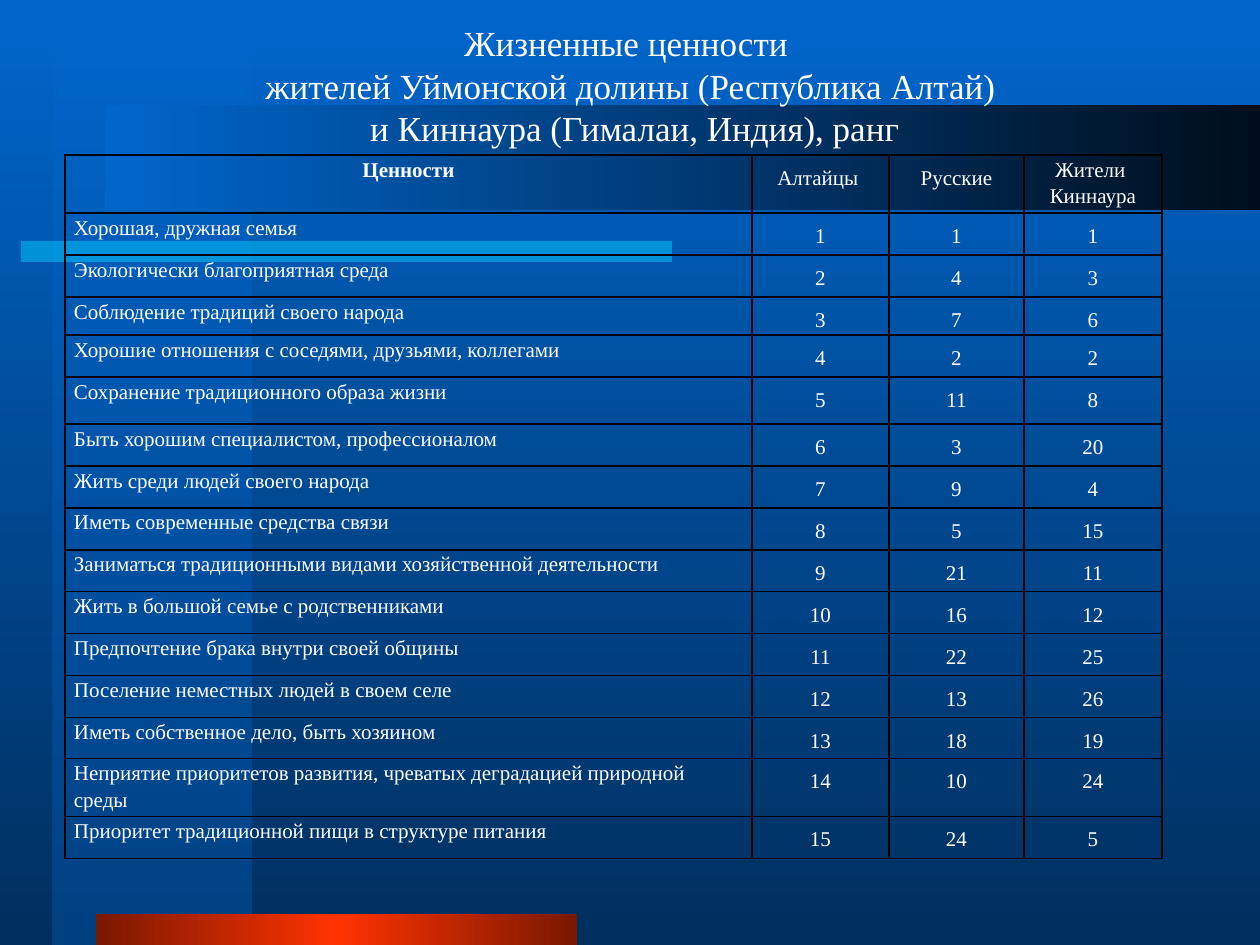
from dataclasses import dataclass
from lxml.etree import SubElement as Sub
from pptx import Presentation
from pptx.dml.color import RGBColor as Rgb
from pptx.enum.shapes import MSO_SHAPE as Kind
from pptx.enum.text import MSO_ANCHOR as Anchor, PP_ALIGN as Align
from pptx.oxml.ns import qn
from pptx.util import Emu, Pt


@dataclass(frozen=True)
class Theme:
    font: str = "Times New Roman"
    head: int = 20
    body: int = 12
    ink: str = "FFFFFF"
    rule: str = "000000"
    sky: str = "0066CC"
    deep: str = "002F5E"
    side: str = "0053A6"
    night: str = "000E1C"
    cyan: str = "00CCFF"
    red: str = "FF3300"
    rust: str = "7A1800"


LOOK = Theme()
TITLE = "Жизненные ценности \nжителей Уймонской долины (Республика Алтай)\n и Киннаура (Гималаи, Индия), ранг"
HEADS = ["Ценности", "Алтайцы ", "Русские", "Жители |Киннаура"]
ROWS = [
    ("Хорошая, дружная семья", 1, 1, 1),
    ("Экологически благоприятная среда", 2, 4, 3),
    ("Соблюдение традиций своего народа", 3, 7, 6),
    ("Хорошие отношения с соседями, друзьями, коллегами", 4, 2, 2),
    ("Сохранение традиционного образа жизни", 5, 11, 8),
    ("Быть хорошим специалистом, профессионалом", 6, 3, 20),
    ("Жить среди людей своего народа", 7, 9, 4),
    ("Иметь современные средства связи", 8, 5, 15),
    ("Заниматься традиционными видами хозяйственной деятельности", 9, 21, 11),
    ("Жить в большой семье с родственниками", 10, 16, 12),
    ("Предпочтение брака внутри своей общины", 11, 22, 25),
    ("Поселение неместных людей в своем селе", 12, 13, 26),
    ("Иметь собственное дело, быть хозяином", 13, 18, 19),
    ("Неприятие приоритетов развития, чреватых деградацией природной среды", 14, 10, 24),
    ("Приоритет традиционной пищи в структуре питания", 15, 24, 5),
]
WIDTHS = [687, 137, 135, 138]
TALL = {0: 53, 3: 38, 5: 47, 13: 41, 14: 53}


def px(n):
    return Emu(round(n * 914400 / 126))


def tint(node, color, alpha=100):
    clr = Sub(node, qn("a:srgbClr"), val=color)
    if alpha < 100:
        Sub(clr, qn("a:alpha"), val=str(alpha * 1000))


def blend(root, fill, colors, angle=0, alpha=100):
    fill.gradient()
    grad = root.find(".//" + qn("a:gradFill"))
    stops = grad.find(qn("a:gsLst"))
    stops.clear()
    for i, color in enumerate(colors):
        pos = 100000 * i // (len(colors) - 1)
        tint(Sub(stops, qn("a:gs"), pos=str(pos)), color, alpha)
    grad.find(qn("a:lin")).set("ang", str(angle * 60000))


def write(frame, text, size=LOOK.body, bold=False, align=Align.LEFT, space=None):
    frame.word_wrap = True
    for i, line in enumerate(text.split("|")):
        para = frame.add_paragraph() if i else frame.paragraphs[0]
        para.text = line
        para.alignment = align
        para.line_spacing = space
        for run in para.runs:
            font = run.font
            font.name, font.size, font.bold = LOOK.font, Pt(size), bold
            font.color.rgb = Rgb.from_string(LOOK.ink)


def bar(slide, box, colors, angle=0, alpha=100):
    shape = slide.shapes.add_shape(Kind.RECTANGLE, *map(px, box))
    shape.shadow.inherit = False
    shape.line.fill.background()
    blend(shape._element.spPr, shape.fill, colors, angle, alpha)


def scene(slide, box):
    x, y, w, h = box
    blend(slide._element, slide.background.fill, [LOOK.sky, LOOK.deep], 90)
    bar(slide, (x + 53, y, 199, h), [LOOK.sky, LOOK.side], 90, 50)
    bar(slide, (x + 21, y + 241, 651, 21), [LOOK.cyan, LOOK.cyan], alpha=50)
    bar(slide, (x + 96, y + h - 31, 481, 31), [LOOK.rust, LOOK.red, LOOK.rust])
    bar(slide, (x + 105, y + 105, w - 105, 105), [LOOK.sky, LOOK.night])


def title(slide, box):
    frame = slide.shapes.add_textbox(*map(px, box)).text_frame
    frame.vertical_anchor = Anchor.MIDDLE
    write(frame, TITLE, size=LOOK.head, align=Align.CENTER)


def frame_cell(cell):
    props = cell._tc.get_or_add_tcPr()
    for side in ("lnL", "lnR", "lnT", "lnB"):
        line = Sub(props, qn("a:" + side), w=str(Pt(1)))
        tint(Sub(line, qn("a:solidFill")), LOOK.rule)
    cell.fill.background()
    cell.margin_left = cell.margin_right = px(9)
    cell.margin_top = cell.margin_bottom = 0


def ranks(slide, box):
    data = [HEADS, *ROWS]
    table = slide.shapes.add_table(len(data), len(HEADS), *map(px, box)).table
    table.first_row = table.horz_banding = False
    for col, width in zip(table.columns, WIDTHS):
        col.width = px(width)
    for r, row in enumerate(data):
        table.rows[r].height = px(TALL.get(r, 42))
        for c, value in enumerate(row):
            cell = table.cell(r, c)
            frame_cell(cell)
            text = str(value)
            tight = c == 0 or "|" in text
            write(cell.text_frame, text, bold=r == c == 0,
                  align=Align.CENTER if r == 0 or c else Align.LEFT,
                  space=1.15 if tight else 1.5)


def main():
    deck = Presentation()
    deck.slide_width, deck.slide_height = px(1260), px(945)
    slide = deck.slides.add_slide(deck.slide_layouts[6])
    scene(slide, (0, 0, 1260, 945))
    title(slide, (95, 26, 1071, 118))
    ranks(slide, (65, 155, sum(WIDTHS), 694))
    deck.save("out.pptx")


if __name__ == "__main__":
    main()
